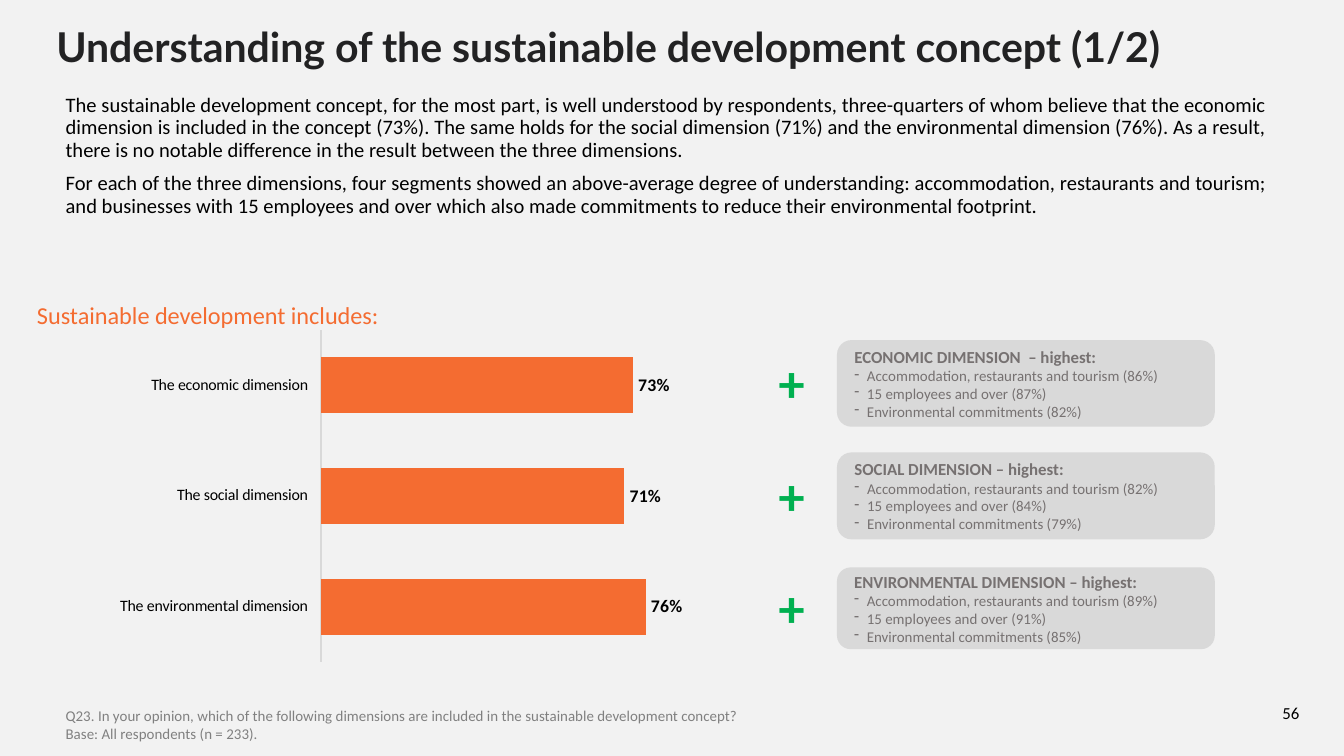
from dataclasses import dataclass

from lxml import etree
from pptx import Presentation
from pptx.chart.data import CategoryChartData
from pptx.dml.color import RGBColor
from pptx.enum.chart import XL_CHART_TYPE, XL_LABEL_POSITION, XL_TICK_LABEL_POSITION, XL_TICK_MARK
from pptx.enum.shapes import MSO_SHAPE
from pptx.enum.text import MSO_ANCHOR, PP_ALIGN
from pptx.oxml.ns import qn
from pptx.util import Pt

LEFT, CENTER, JUSTIFY = PP_ALIGN.LEFT, PP_ALIGN.CENTER, PP_ALIGN.JUSTIFY
TOP, MIDDLE, BOTTOM = MSO_ANCHOR.TOP, MSO_ANCHOR.MIDDLE, MSO_ANCHOR.BOTTOM
BAR = XL_CHART_TYPE.BAR_CLUSTERED
OUTSIDE_END = XL_LABEL_POSITION.OUTSIDE_END
NO_TICK = XL_TICK_MARK.NONE
LABELS_LOW = XL_TICK_LABEL_POSITION.LOW
ROUNDED = MSO_SHAPE.ROUNDED_RECTANGLE


@dataclass(frozen=True)
class Theme:
    background: str = "F2F2F2"
    title: str = "222223"
    text: str = "000000"
    note: str = "808080"
    accent: str = "F46C31"
    plus: str = "00B050"
    card: str = "D9D9D9"
    card_text: str = "767171"
    font: str = "Calibri"
    title_font: str = "Lato"
    title_size: float = 22
    heading_size: float = 13
    body_size: float = 11
    plus_size: float = 28
    label_size: float = 9.5
    category_size: float = 8.5
    card_title_size: float = 9
    small_size: float = 8


THEME = Theme()

BODY = (
    "The sustainable development concept, for the most part, is well understood by respondents, "
    "three-quarters of whom believe that the economic dimension is included in the concept (73%). "
    "The same holds for the social dimension (71%) and the environmental dimension (76%). As a result, "
    "there is no notable difference in the result between the three dimensions.",
    "For each of the three dimensions, four segments showed an above-average degree of understanding: "
    "accommodation, restaurants and tourism; and businesses with 15 employees and over which also made "
    "commitments to reduce their environmental footprint.",
)
NOTES = (
    "Q23. In your opinion, which of the following dimensions are included in the sustainable development concept?",
    "Base: All respondents (n = 233).",
)
DIMENSIONS = {
    "The economic dimension": 0.73,
    "The social dimension": 0.71,
    "The environmental dimension": 0.76,
}
SEGMENTS = ("Accommodation, restaurants and tourism", "15 employees and over", "Environmental commitments")
CARDS = (
    ("ECONOMIC DIMENSION  – highest:", (86, 87, 82), 182.2, 46.4),
    ("SOCIAL DIMENSION – highest:", (82, 84, 79), 242.4, 46.6),
    ("ENVIRONMENTAL DIMENSION – highest:", (89, 91, 85), 304, 43.8),
)


def set_font(font, size, color, bold=False, name=THEME.font):
    font.name = name
    font.size = Pt(size)
    font.bold = bold
    font.color.rgb = RGBColor.from_string(color)


def write_text(paragraph, text, *, size, color=THEME.text, bold=False, name=THEME.font,
               align=LEFT, spacing=None, after=0, bullet=None):
    if bullet:
        properties = paragraph._p.get_or_add_pPr()
        properties.set("marL", str(Pt(6.75)))
        properties.set("indent", str(Pt(-6.75)))
        etree.SubElement(properties, qn("a:buChar"), char=bullet)
    paragraph.alignment = align
    paragraph.line_spacing = spacing
    paragraph.space_after = Pt(after)
    run = paragraph.add_run()
    run.text = text
    set_font(run.font, size, color, bold, name)


def next_paragraph(frame, index):
    return frame.add_paragraph() if index else frame.paragraphs[0]


def add_text(slide, box, lines, *, anchor=TOP, margins=(7.2, 3.6), **text_format):
    frame = slide.shapes.add_textbox(*map(Pt, box)).text_frame
    frame.word_wrap = True
    frame.vertical_anchor = anchor
    frame.margin_left = frame.margin_right = Pt(margins[0])
    frame.margin_top = frame.margin_bottom = Pt(margins[1])
    for index, line in enumerate(lines):
        write_text(next_paragraph(frame, index), line, **text_format)


def add_card(slide, title, percentages, top, height):
    shape = slide.shapes.add_shape(ROUNDED, Pt(448.4), Pt(top), Pt(202.4), Pt(height))
    shape.shadow.inherit = False
    shape.fill.solid()
    shape.fill.fore_color.rgb = RGBColor.from_string(THEME.card)
    shape.line.fill.background()
    frame = shape.text_frame
    frame.word_wrap = True
    frame.vertical_anchor = MIDDLE
    write_text(frame.paragraphs[0], title, size=THEME.card_title_size, color=THEME.card_text, bold=True)
    for segment, percentage in zip(SEGMENTS, percentages):
        write_text(frame.add_paragraph(), f"{segment} ({percentage}%)",
                   size=THEME.small_size, color=THEME.card_text, bullet="-")


def set_plot_layout(chart, x, y, width, height):
    plot_area = chart._chartSpace.chart.plotArea
    layout = plot_area.find(qn("c:layout"))
    if layout is None:
        layout = etree.Element(qn("c:layout"))
        plot_area.insert(0, layout)
    manual = etree.SubElement(layout, qn("c:manualLayout"))
    values = {"layoutTarget": "inner", "xMode": "edge", "yMode": "edge",
              "x": x, "y": y, "w": width, "h": height}
    for tag, value in values.items():
        etree.SubElement(manual, qn(f"c:{tag}"), val=str(value))


def add_dimension_chart(slide):
    data = CategoryChartData(number_format="0%")
    data.categories = list(DIMENSIONS)
    data.add_series("Series 1", list(DIMENSIONS.values()))
    chart = slide.shapes.add_chart(BAR, Pt(34.6), Pt(176.4), Pt(381.6), Pt(178.6), data).chart
    chart.has_legend = False
    chart.has_title = False
    set_font(chart.font, THEME.category_size, THEME.text)
    set_plot_layout(chart, 0.36, 0, 0.6, 1)

    category_axis = chart.category_axis
    category_axis.reverse_order = True
    category_axis.major_tick_mark = NO_TICK
    category_axis.tick_label_position = LABELS_LOW
    category_axis.format.line.color.rgb = RGBColor.from_string(THEME.card)
    category_axis.format.line.width = Pt(0.75)
    set_font(category_axis.tick_labels.font, THEME.category_size, THEME.text)
    value_axis = chart.value_axis
    value_axis.minimum_scale = 0
    value_axis.maximum_scale = 1
    value_axis.has_major_gridlines = False
    value_axis.visible = False

    plot = chart.plots[0]
    plot.gap_width = 98
    plot.vary_by_categories = False
    series = plot.series[0]
    series.format.fill.solid()
    series.format.fill.fore_color.rgb = RGBColor.from_string(THEME.accent)
    labels = series.data_labels
    labels.show_value = True
    labels.position = OUTSIDE_END
    labels.number_format = "0%"
    labels.number_format_is_linked = False
    set_font(labels.font, THEME.label_size, THEME.text, bold=True)


def main():
    presentation = Presentation()
    presentation.slide_width, presentation.slide_height = Pt(720), Pt(405)
    slide = presentation.slides.add_slide(presentation.slide_layouts[6])
    slide.background.fill.solid()
    slide.background.fill.fore_color.rgb = RGBColor.from_string(THEME.background)

    add_text(slide, (673.2, 369.4, 36.7, 21.6), ["56"], anchor=BOTTOM,
             size=THEME.card_title_size, align=CENTER)
    add_text(slide, (28.1, 50.4, 658.1, 67), BODY, margins=(7.2, 0), size=THEME.body_size,
             align=JUSTIFY, spacing=Pt(12), after=6)
    add_text(slide, (28.1, 375.1, 601.9, 26.6), NOTES, size=THEME.small_size, color=THEME.note)
    add_text(slide, (25.2, 13.7, 675.4, 25.9), ["Understanding of the sustainable development concept (1/2)"],
             anchor=MIDDLE, margins=(5, 2.9), size=THEME.title_size, color=THEME.title,
             bold=True, name=THEME.title_font, spacing=0.9)
    add_dimension_chart(slide)
    add_text(slide, (7.9, 160.6, 206.6, 15.8), ["Sustainable development includes:"], margins=(0, 0),
             size=THEME.heading_size, color=THEME.accent, align=CENTER)
    for index, card in enumerate(CARDS):
        add_text(slide, (383.8, 184.3 + 60.1 * index, 80.6, 41), ["+"],
                 size=THEME.plus_size, color=THEME.plus, bold=True, align=CENTER)
        add_card(slide, *card)

    presentation.save("out.pptx")


if __name__ == "__main__":
    main()
